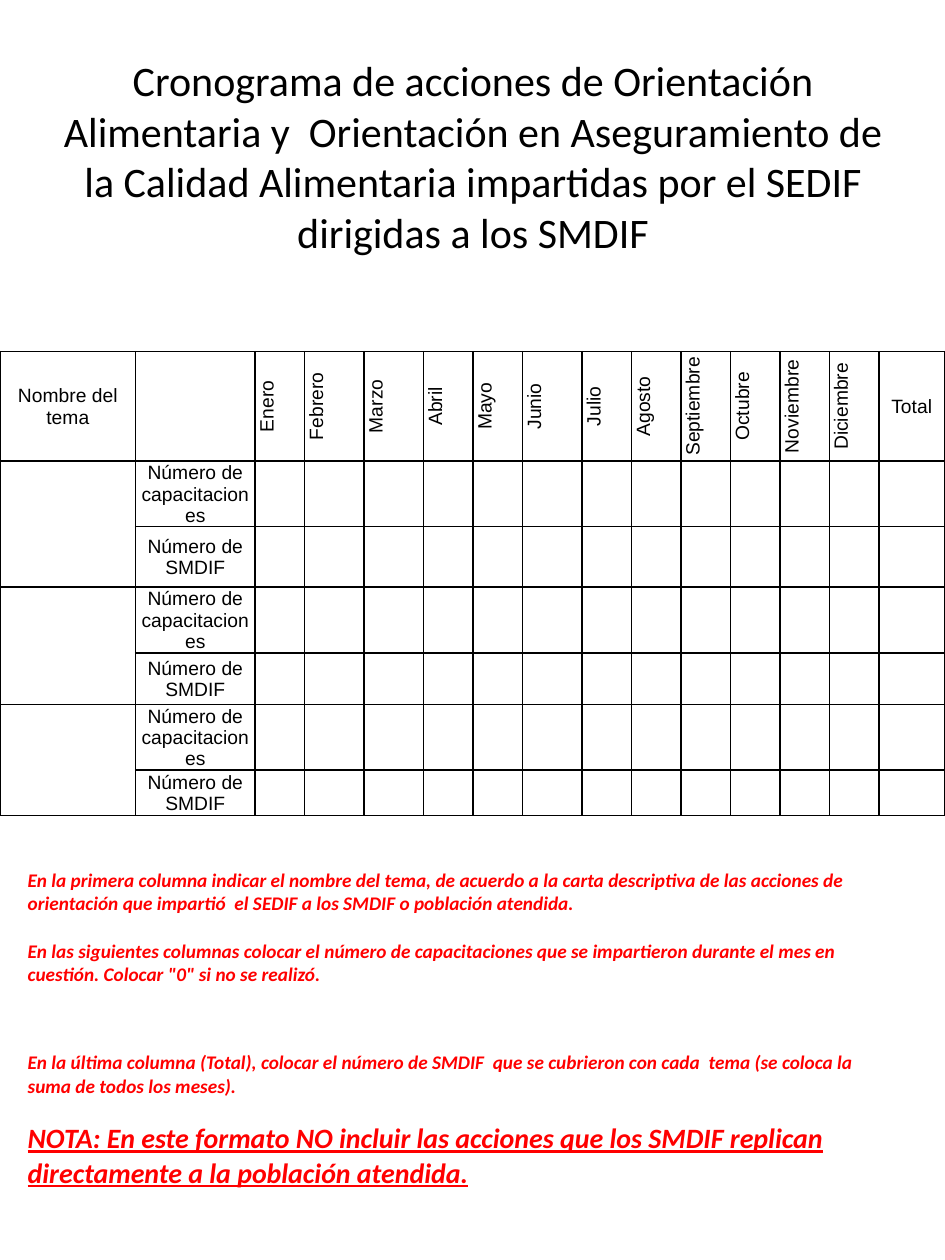
from pptx import Presentation
from pptx.dml.color import RGBColor
from pptx.enum.text import MSO_ANCHOR as Anchor, PP_ALIGN as Align
from pptx.oxml import parse_xml
from pptx.oxml.ns import nsdecls
from pptx.util import Inches, Pt

BLACK = "000000"
RED = "FF0000"
MONTHS = ["Enero", "Febrero", "Marzo", "Abril", "Mayo", "Junio", "Julio", "Agosto",
          "Septiembre", "Octubre", "Noviembre", "Diciembre"]
COUNTS = ["Número de capacitaciones", "Número de SMDIF"]
WIDTHS = [1.07, 0.94, 0.39, 0.47, 0.47, 0.39, 0.39, 0.47] + [0.39] * 6 + [0.52]
HEIGHTS = [0.87, 0.49, 0.48, 0.41, 0.41, 0.34, 0.36]
NOTE_WIDTHS = [0.86, 0.36, 0.47, 0.38, 0.32, 0.35, 0.34, 0.3, 0.43, 0.68, 0.49,
               0.65, 0.6, 0.68]
NOTE_HEIGHTS = [0.37, 1.32, 1.52]
THEME = ("En la primera columna indicar el nombre del tema, de acuerdo a la carta "
         "descriptiva de las acciones de orientación que impartió  el SEDIF a los "
         "SMDIF o población atendida.")
MONTHLY = ("En las siguientes columnas colocar el número de capacitaciones que se "
           "impartieron durante el mes en cuestión. Colocar \"0\" si no se realizó.")
TOTAL = ("En la última columna (Total), colocar el número de SMDIF  que se cubrieron "
         "con cada  tema (se coloca la suma de todos los meses).")
WARNING = ("NOTA: En este formato NO incluir las acciones que los SMDIF replican "
           "directamente a la población atendida.")


def style(par, size, face, color, align=Align.LEFT):
    """Format every run of a paragraph."""
    par.alignment = align
    for run in par.runs:
        run.font.size = Pt(size)
        run.font.name = face
        run.font.color.rgb = RGBColor.from_string(color)


def add_title(slide):
    """Place and fill the title."""
    title = slide.shapes.title
    title.left, title.top = Inches(0.38), Inches(0.4)
    title.width, title.height = Inches(6.75), Inches(1.67)
    frame = title.text_frame
    frame.text = ("Cronograma de acciones de Orientación Alimentaria y  Orientación "
                  "en Aseguramiento de la Calidad Alimentaria impartidas por el SEDIF "
                  "dirigidas a los SMDIF")
    frame.vertical_anchor = Anchor.MIDDLE
    style(frame.paragraphs[0], 24, "Calibri", BLACK, Align.CENTER)


def add_lines(cell, paint):
    """Give the four borders of a cell the same paint."""
    props = cell._tc.get_or_add_tcPr()
    for pos, side in enumerate("LRTB"):
        props.insert(pos, parse_xml(
            f'<a:ln{side} {nsdecls("a")} w="{Pt(1)}">{paint}</a:ln{side}>'))


def add_grid(slide, left, top, width, widths, heights, color=None):
    """Add an unfilled table scaled to a width, with lines if a colour is given."""
    shape = slide.shapes.add_table(len(heights), len(widths), Inches(left), Inches(top),
                                   Inches(width), Inches(sum(heights)))
    table = shape.table
    table.first_row = table.horz_banding = False
    scale = width / sum(widths)
    for col, part in zip(table.columns, widths):
        col.width = Inches(part * scale)
    for row, height in zip(table.rows, heights):
        row.height = Inches(height)
    paint = "<a:noFill/>"
    if color:
        paint = f'<a:solidFill><a:srgbClr val="{color}"/></a:solidFill>'
    for cell in table.iter_cells():
        cell.margin_left = cell.margin_right = cell.margin_top = Inches(0.01)
        cell.margin_bottom = 0
        cell.vertical_anchor = Anchor.MIDDLE
        cell.fill.background()
        add_lines(cell, paint)
    return table


def put_label(cell, text):
    """Write a centred label in a cell."""
    cell.text_frame.text = text
    style(cell.text_frame.paragraphs[0], 11, "Arial", BLACK, Align.CENTER)


def add_plan(slide):
    """Build the monthly schedule."""
    table = add_grid(slide, 0, 2.79, 7.5, WIDTHS, HEIGHTS, BLACK)
    put_label(table.cell(0, 0), "Nombre del tema")
    put_label(table.cell(0, len(WIDTHS) - 1), "Total")
    for col, month in enumerate(MONTHS, 2):
        cell = table.cell(0, col)
        put_label(cell, month)
        cell._tc.get_or_add_tcPr().set("vert", "vert270")
    for row in range(1, len(HEIGHTS), 2):
        table.cell(row, 0).merge(table.cell(row + 1, 0))
        for step, label in enumerate(COUNTS):
            put_label(table.cell(row + step, 1), label)


def put_note(table, row, texts, anchor):
    """Write spaced red notes across a whole row."""
    cell = table.cell(row, 0)
    cell.merge(table.cell(row, len(NOTE_WIDTHS) - 1))
    cell.vertical_anchor = anchor
    cell.margin_bottom = Inches(0.18)
    frame = cell.text_frame
    frame.text = "\n".join(texts)
    for par in frame.paragraphs:
        style(par, 11, "Calibri", RED)
        for run in par.runs:
            run.font.bold = run.font.italic = True
    frame.paragraphs[0].space_after = Pt(13.4)
    return frame.paragraphs


def add_notes(slide):
    """Build the filling instructions."""
    table = add_grid(slide, 0.21, 6.42, 6.91, NOTE_WIDTHS, NOTE_HEIGHTS)
    put_note(table, 1, [THEME, MONTHLY], Anchor.MIDDLE)
    pars = put_note(table, 2, [TOTAL, WARNING], Anchor.BOTTOM)
    for run in pars[-1].runs:
        run.font.size = Pt(16)
        run.font.underline = True


def main():
    """Build and save the slide."""
    deck = Presentation()
    deck.slide_width, deck.slide_height = Inches(7.5), Inches(10)
    slide = deck.slides.add_slide(deck.slide_layouts[5])
    add_title(slide)
    add_plan(slide)
    add_notes(slide)
    deck.save("out.pptx")


if __name__ == "__main__":
    main()
